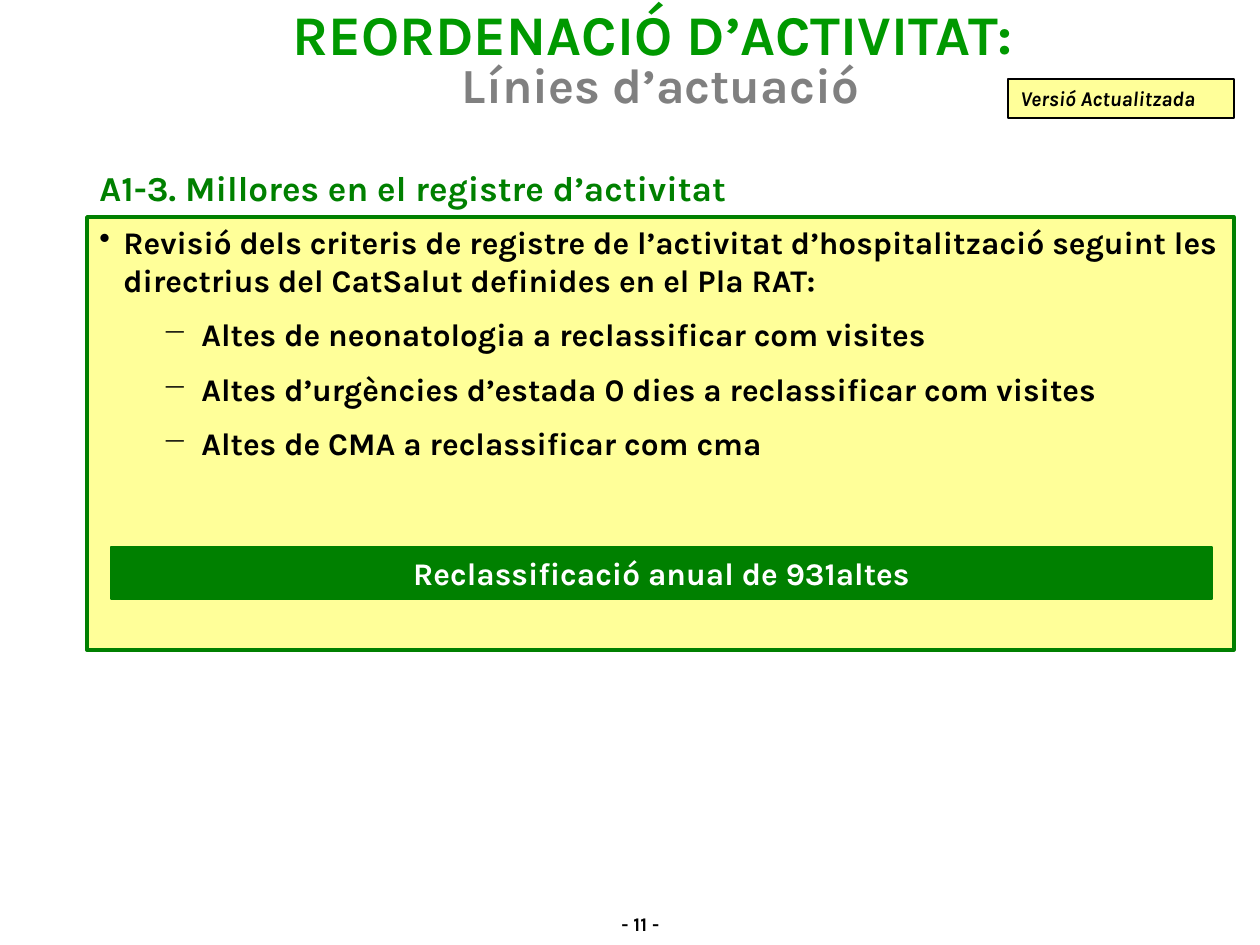
import dataclasses
import typing

import lxml.etree
import pptx
import pptx.dml.color
import pptx.enum.shapes
import pptx.enum.text
import pptx.oxml.ns
import pptx.util

SCALE = 914400 / 126
ALIGN = pptx.enum.text.PP_ALIGN
ANCHOR = pptx.enum.text.MSO_ANCHOR


@dataclasses.dataclass(frozen=True)
class Theme:
    face: str = "Karla"
    black: str = "000000"
    white: str = "FFFFFF"
    green: str = "008000"
    bright: str = "009900"
    gray: str = "808080"
    cream: str = "FFFF99"
    title: int = 32
    sub: int = 28
    head: int = 20
    body: int = 18
    note: int = 12
    foot: int = 11
    gap: float = 9.5


THEME = Theme()


@dataclasses.dataclass(frozen=True)
class Para:
    text: str
    size: int
    color: str = THEME.black
    align: ALIGN = ALIGN.LEFT
    italic: bool = False
    bullet: str = ""
    left: int = 0
    hang: int = 0
    format: dict = dataclasses.field(default_factory=dict)


@dataclasses.dataclass(frozen=True)
class Box:
    left: int
    top: int
    width: int
    height: int
    paras: list[Para]
    fill: str = ""
    line: str = ""
    weight: float = 0.75
    anchor: ANCHOR = ANCHOR.TOP


def px(count: int) -> pptx.util.Emu:
    return pptx.util.Emu(round(count * SCALE))


def rgb(code: str) -> pptx.dml.color.RGBColor:
    return pptx.dml.color.RGBColor.from_string(code)


def assign(target: typing.Any, values: dict) -> None:
    for name, value in values.items():
        setattr(target, name, value)


def mark(par: typing.Any, item: Para) -> None:
    """Give a paragraph its bullet and hanging indent."""
    props = par._p.get_or_add_pPr()
    props.set("marL", str(px(item.left)))
    props.set("indent", str(-px(item.hang)))
    tag = pptx.oxml.ns.qn("a:buChar")
    lxml.etree.SubElement(props, tag).set("char", item.bullet)


def write(frame: typing.Any, box: Box) -> None:
    assign(frame, {
        "word_wrap": True,
        "auto_size": pptx.enum.text.MSO_AUTO_SIZE.NONE,
        "vertical_anchor": box.anchor,
    })
    for index, item in enumerate(box.paras):
        par = frame.add_paragraph() if index else frame.paragraphs[0]
        if item.bullet:
            mark(par, item)
        assign(par, {"alignment": item.align, **item.format})
        run = par.add_run()
        run.text = item.text
        assign(run.font, {
            "name": THEME.face,
            "size": pptx.util.Pt(item.size),
            "bold": True,
            "italic": item.italic,
        })
        run.font.color.rgb = rgb(item.color)


def place(box: Box) -> tuple:
    return tuple(map(px, (box.left, box.top, box.width, box.height)))


def draw(slide: typing.Any, box: Box) -> None:
    if box.fill:
        kind = pptx.enum.shapes.MSO_SHAPE.RECTANGLE
        shape = slide.shapes.add_shape(kind, *place(box))
        shape.shadow.inherit = False
        shape.fill.solid()
        shape.fill.fore_color.rgb = rgb(box.fill)
        shape.line.color.rgb = rgb(box.line)
        shape.line.width = pptx.util.Pt(box.weight)
    else:
        shape = slide.shapes.add_textbox(*place(box))
    write(shape.text_frame, box)


def entitle(slide: typing.Any, box: Box) -> None:
    title = slide.shapes.title
    assign(title, dict(zip(("left", "top", "width", "height"), place(box))))
    write(title.text_frame, box)


TIGHT = {"line_spacing": 0.8, "space_before": pptx.util.Pt(0)}
SPACED = {"space_before": pptx.util.Pt(THEME.gap)}

TITLE = Box(77, 6, 1167, 113, [
    Para("REORDENACIÓ D’ACTIVITAT: ", THEME.title, THEME.bright,
         ALIGN.CENTER, format=TIGHT),
    Para("Línies d’actuació", THEME.sub, THEME.gray,
         ALIGN.CENTER, format=TIGHT),
])

ITEMS = [
    "Altes de neonatologia a reclassificar com visites",
    "Altes d’urgències d’estada 0 dies a reclassificar com visites",
    "Altes de CMA a reclassificar com cma",
]

LEAD = Para(
    "Revisió dels criteris de registre de l’activitat d’hospitalització "
    "seguint les directrius del CatSalut definides en el Pla RAT:",
    THEME.body, bullet="•", left=24, hang=24)

PANEL = [LEAD] + [
    Para(item, THEME.body, bullet="−", left=102, hang=39, format=SPACED)
    for item in ITEMS
]

BOXES = [
    Box(609, 906, 262, 36, [Para("- 11 -", THEME.foot)]),
    Box(87, 217, 1147, 433, PANEL, THEME.cream, THEME.green, 2),
    Box(87, 160, 1130, 54, [
        Para("A1-3. Millores en el registre d’activitat",
             THEME.head, THEME.green),
    ]),
    Box(111, 547, 1101, 52, [
        Para("Reclassificació anual de 931altes", THEME.body, THEME.white,
             ALIGN.CENTER),
    ], THEME.green, THEME.green, anchor=ANCHOR.MIDDLE),
    Box(1008, 79, 226, 39, [
        Para("Versió Actualitzada", THEME.note, italic=True),
    ], THEME.cream, THEME.black, anchor=ANCHOR.MIDDLE),
]


def main() -> None:
    deck = pptx.Presentation()
    assign(deck, {"slide_width": px(1260), "slide_height": px(945)})
    slide = deck.slides.add_slide(deck.slide_layouts[5])
    entitle(slide, TITLE)
    for box in BOXES:
        draw(slide, box)
    deck.save("out.pptx")


if __name__ == "__main__":
    main()
